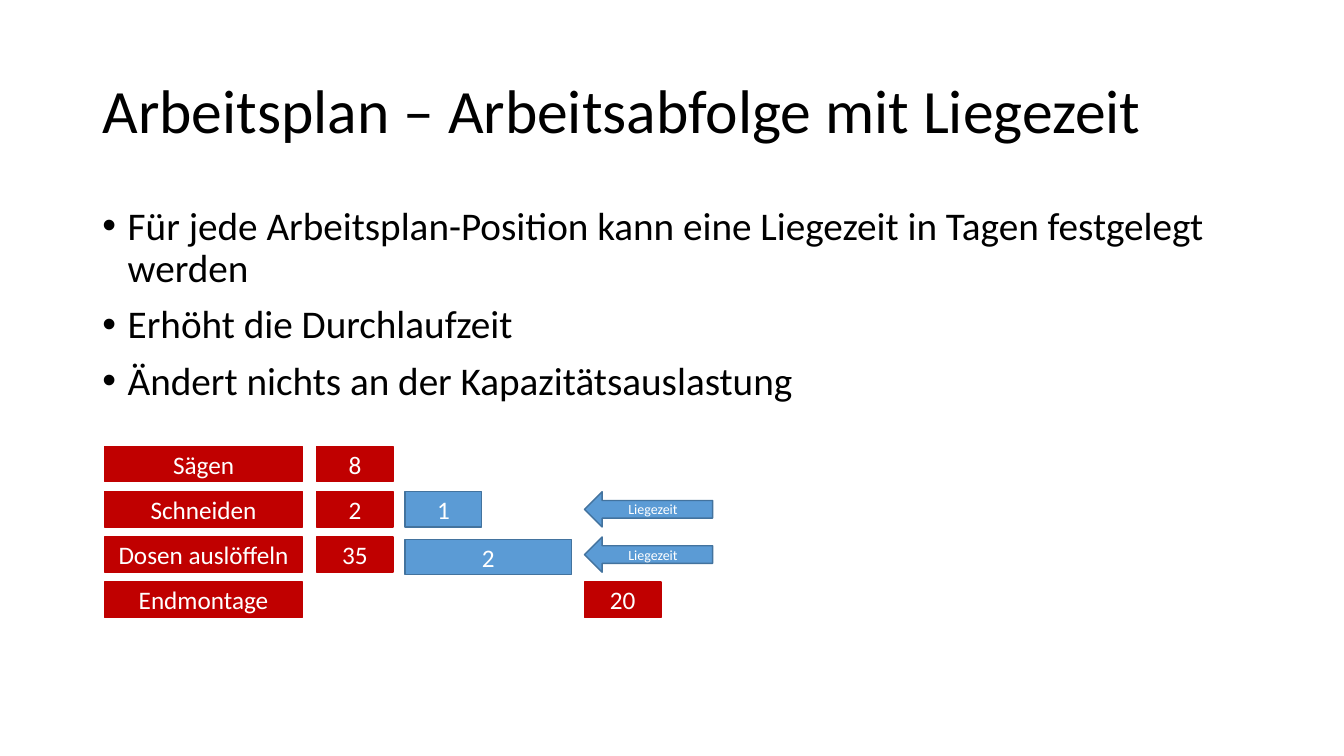
from lxml.etree import SubElement
from pptx import Presentation
from pptx.dml.color import RGBColor
from pptx.enum.shapes import MSO_SHAPE as SHAPE
from pptx.enum.text import MSO_ANCHOR as ANCHOR, MSO_AUTO_SIZE as AUTO, PP_ALIGN as ALIGN
from pptx.oxml.ns import qn
from pptx.util import Cm, Pt

BLACK = RGBColor(0x00, 0x00, 0x00)
WHITE = RGBColor(0xFF, 0xFF, 0xFF)
RED = RGBColor(0xC0, 0x00, 0x00)
BLUE = RGBColor(0x5B, 0x9B, 0xD5)
DARK_BLUE = RGBColor(0x43, 0x73, 0x9E)


def write(p, text, size=18, color=WHITE, align=ALIGN.CENTER, spacing=None, before=None, bullet=None):
    if bullet:
        pPr = p._p.get_or_add_pPr()
        pPr.set("marL", str(Cm(0.64)))
        pPr.set("indent", str(-Cm(0.64)))
        SubElement(pPr, qn("a:buFont")).set("typeface", "Arial")
        SubElement(pPr, qn("a:buChar")).set("char", bullet)
    p.alignment = align
    p.line_spacing = spacing
    p.space_before = before
    r = p.add_run()
    r.text = text
    r.font.name = "Calibri"
    r.font.size = Pt(size)
    r.font.color.rgb = color


def add_block(kind, x, y, w, text, fill, line, size=18):
    sp = slide.shapes.add_shape(kind, Cm(x), Cm(y), Cm(w), Cm(0.89))
    sp.shadow.inherit = False
    sp.fill.solid()
    sp.fill.fore_color.rgb = fill
    sp.line.color.rgb = line
    sp.line.width = Pt(1)
    sp.text_frame.vertical_anchor = ANCHOR.MIDDLE
    write(sp.text_frame.paragraphs[0], text, size=size)


prs = Presentation()
prs.slide_width, prs.slide_height = Cm(33.87), Cm(19.05)
slide = prs.slides.add_slide(prs.slide_layouts[5])

# Title
title = slide.shapes.title
title.left, title.top, title.width, title.height = Cm(2.33), Cm(1.01), Cm(29.21), Cm(3.68)
tf = title.text_frame
tf.auto_size = AUTO.NONE
tf.vertical_anchor = ANCHOR.MIDDLE
write(tf.paragraphs[0], "Arbeitsplan – Arbeitsabfolge mit Liegezeit",
      size=44, color=BLACK, align=ALIGN.LEFT, spacing=0.9)

# Bullet list
body = slide.shapes.add_textbox(Cm(2.33), Cm(5.07), Cm(29.21), Cm(12.09))
tf = body.text_frame
tf.word_wrap = True
points = [
    "Für jede Arbeitsplan-Position kann eine Liegezeit in Tagen festgelegt werden",
    "Erhöht die Durchlaufzeit",
    "Ändert nichts an der Kapazitätsauslastung",
]
for i, point in enumerate(points):
    p = tf.add_paragraph() if i else tf.paragraphs[0]
    write(p, point, size=28, color=BLACK, align=ALIGN.LEFT, spacing=0.9,
          before=Pt(10 if i else 0), bullet="•")

# Work steps: name, left edge and value of the work time
TOP, PITCH = 11.25, 1.14
WORK_X, WAIT_X, END_X = 7.98, 10.21, 14.73
steps = [
    ("Sägen", WORK_X, "8"),
    ("Schneiden", WORK_X, "2"),
    ("Dosen auslöffeln", WORK_X, "35"),
    ("Endmontage", END_X, "20"),
]
for row, (name, x, work) in enumerate(steps):
    y = TOP + row * PITCH
    add_block(SHAPE.RECTANGLE, 2.64, y, 4.98, name, RED, RED)
    add_block(SHAPE.RECTANGLE, x, y, 1.93, work, RED, RED)

# Waiting times: row, offset and width of the bar, days
for row, offset, width, days in [(1, 0, 1.93, "1"), (2, 0.06, 4.19, "2")]:
    y = TOP + row * PITCH
    add_block(SHAPE.RECTANGLE, WAIT_X, y + offset, width, days, BLUE, DARK_BLUE)
    add_block(SHAPE.LEFT_ARROW, END_X, y, 3.23, "Liegezeit", BLUE, DARK_BLUE, size=10)

prs.save("out.pptx")
